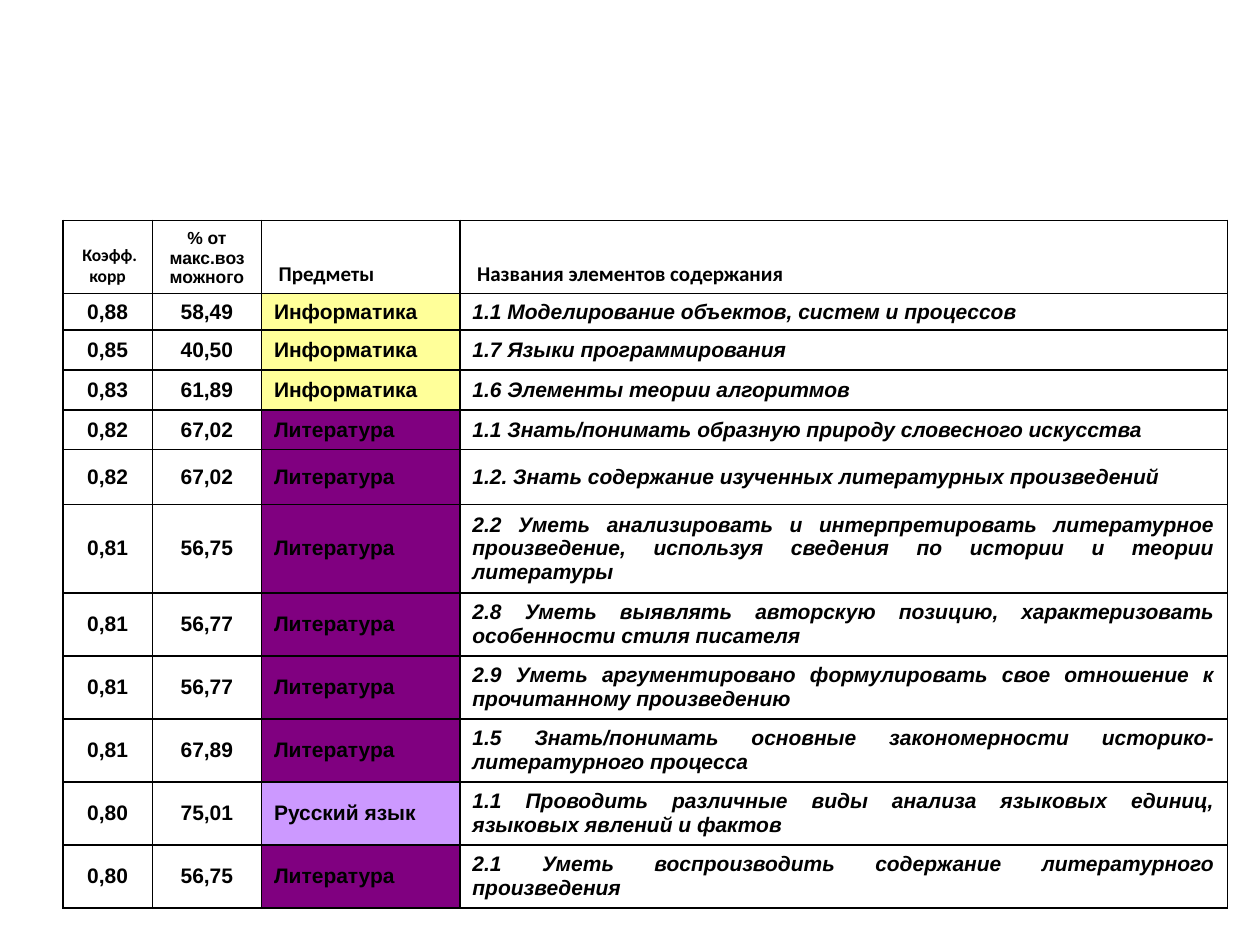
from dataclasses import dataclass

from lxml import etree
from pptx import Presentation
from pptx.dml.color import RGBColor
from pptx.enum import text
from pptx.oxml import ns
from pptx.util import Cm, Pt


@dataclass(frozen=True)
class Theme:
    ink: str = "000000"
    body_font: str = "Arial"
    head_font: str = "Calibri"
    small: int = 10
    normal: int = 12
    border: int = 1


THEME = Theme()
SUBJECT_FILLS = {
    "Информатика": "FFFF99",
    "Литература": "800080",
    "Русский язык": "CC99FF",
}
COLUMN_WIDTHS = [1.8, 2.2, 4, 15.47]
ROW_HEIGHTS = [1.48, 0.73, 0.81, 0.81, 0.79, 1.11, 1.78] + [1.27] * 5
ALIGNMENTS = [
    text.PP_ALIGN.CENTER,
    text.PP_ALIGN.CENTER,
    text.PP_ALIGN.LEFT,
    text.PP_ALIGN.JUSTIFY,
]
HEADERS = [
    (" Коэфф. корр", THEME.head_font, THEME.small),
    ("% от макс.возможного", THEME.body_font, THEME.small),
    (" Предметы", THEME.head_font, THEME.normal),
    (" Названия элементов содержания", THEME.head_font, THEME.normal),
]
ROWS = [
    ("0,88", "58,49", "Информатика", "1.1 Моделирование объектов, систем и процессов"),
    ("0,85", "40,50", "Информатика", "1.7 Языки программирования"),
    ("0,83", "61,89", "Информатика", "1.6 Элементы теории алгоритмов"),
    ("0,82", "67,02", "Литература",
     "1.1 Знать/понимать образную природу словесного искусства"),
    ("0,82", "67,02", "Литература",
     "1.2. Знать содержание изученных литературных произведений"),
    ("0,81", "56,75", "Литература",
     "2.2 Уметь анализировать и интерпретировать литературное произведение, "
     "используя сведения по истории и теории литературы"),
    ("0,81", "56,77", "Литература",
     "2.8 Уметь выявлять авторскую позицию, характеризовать особенности стиля писателя "),
    ("0,81", "56,77", "Литература",
     "2.9 Уметь аргументировано формулировать свое отношение к прочитанному произведению"),
    ("0,81", "67,89", "Литература",
     "1.5 Знать/понимать основные закономерности историко-литературного процесса"),
    ("0,80", "75,01", "Русский язык",
     "1.1 Проводить различные виды анализа языковых единиц, языковых явлений и фактов"),
    ("0,80", "56,75", "Литература",
     "2.1 Уметь воспроизводить содержание литературного произведения"),
]


def write_text(tf, words, *, align, font=THEME.body_font, size=THEME.normal, italic=False):
    p = tf.paragraphs[0]
    p.alignment = align
    r = p.add_run()
    r.text = words
    r.font.name = font
    r.font.size = Pt(size)
    r.font.bold = True
    r.font.italic = italic
    r.font.color.rgb = RGBColor.from_string(THEME.ink)


def fill_cell(cell, color=None):
    if color:
        cell.fill.solid()
        cell.fill.fore_color.rgb = RGBColor.from_string(color)
    else:
        cell.fill.background()


def add_borders(cell):
    """Draw all four sides; the schema wants them ahead of the fill."""
    tc_pr = cell._tc.get_or_add_tcPr()
    for i, side in enumerate(("lnL", "lnR", "lnT", "lnB")):
        ln = etree.Element(ns.qn(f"a:{side}"), w=str(Pt(THEME.border)))
        fill = etree.SubElement(ln, ns.qn("a:solidFill"))
        etree.SubElement(fill, ns.qn("a:srgbClr"), val=THEME.ink)
        tc_pr.insert(i, ln)


def format_cell(cell, anchor, color=None):
    cell.vertical_anchor = anchor
    fill_cell(cell, color)
    add_borders(cell)


def add_results_table(s):
    frame = s.shapes.add_table(
        len(ROW_HEIGHTS), len(COLUMN_WIDTHS), Cm(1.27), Cm(4.44),
        Cm(sum(COLUMN_WIDTHS)), Cm(sum(ROW_HEIGHTS)))
    table = frame.table
    table.first_row = table.horz_banding = False
    for column, width in zip(table.columns, COLUMN_WIDTHS):
        column.width = Cm(width)
    for row, height in zip(table.rows, ROW_HEIGHTS):
        row.height = Cm(height)
    return table


def fill_header(table):
    for col, (words, font, size) in enumerate(HEADERS):
        cell = table.cell(0, col)
        write_text(cell.text_frame, words, align=ALIGNMENTS[col], font=font, size=size)
        format_cell(cell, text.MSO_ANCHOR.BOTTOM)


def fill_body(table):
    for row, values in enumerate(ROWS, start=1):
        for col, words in enumerate(values):
            cell = table.cell(row, col)
            write_text(cell.text_frame, words, align=ALIGNMENTS[col], italic=col == 3)
            format_cell(cell, text.MSO_ANCHOR.MIDDLE, SUBJECT_FILLS.get(words))


def main():
    prs = Presentation()
    prs.slide_width, prs.slide_height = Cm(25.4), Cm(19.05)
    s = prs.slides.add_slide(prs.slide_layouts[6])
    table = add_results_table(s)
    fill_header(table)
    fill_body(table)
    prs.save("out.pptx")


if __name__ == "__main__":
    main()
